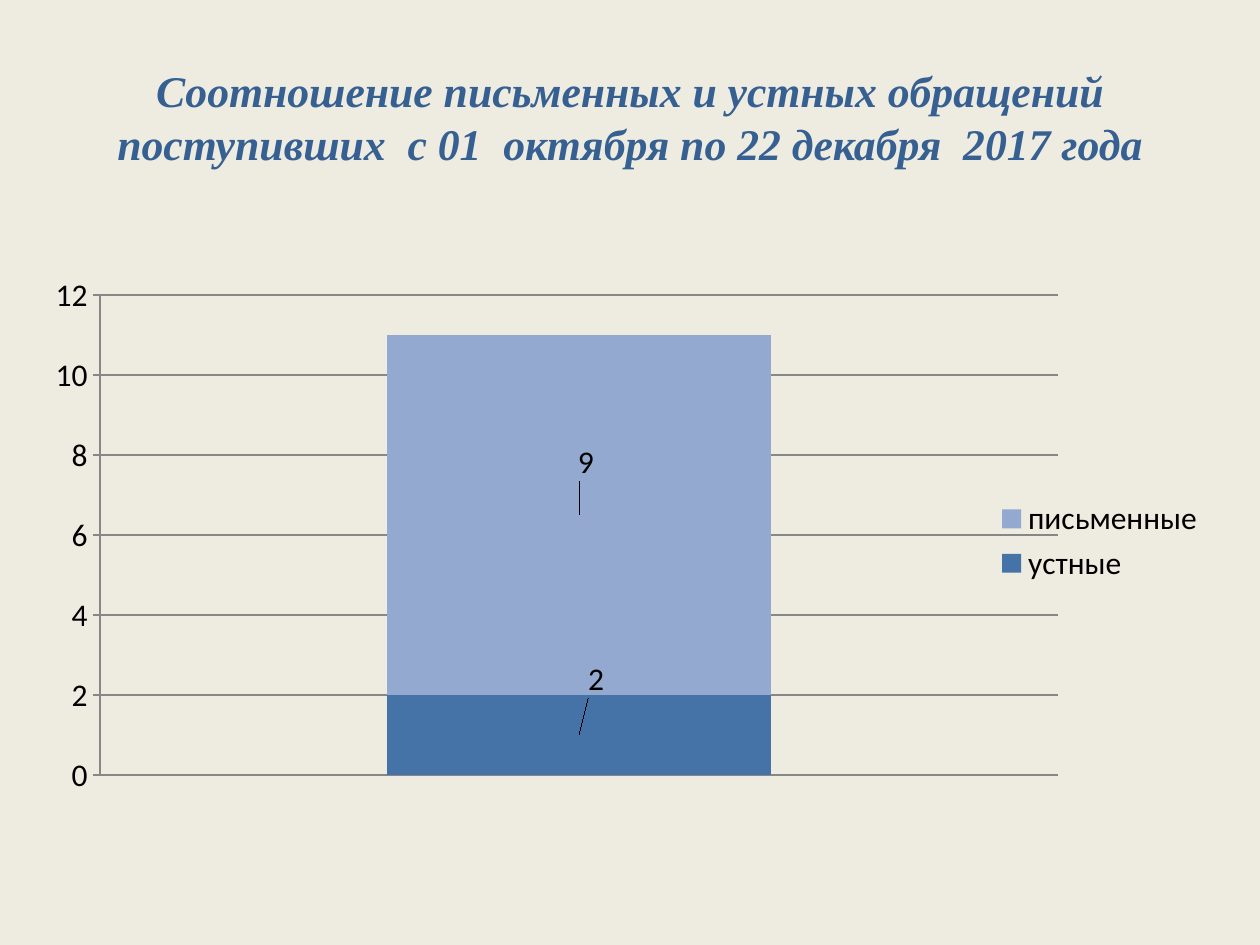
"""Build a slide with a stacked column chart of written and oral appeals."""
import pptx
import pptx.chart.data
import pptx.dml.color
import pptx.enum.chart
import pptx.enum.text
import pptx.oxml
import pptx.oxml.ns
import pptx.util

TITLE = [
    "Соотношение письменных и устных обращений",
    "поступивших  с 01  октября по 22 декабря  2017 года",
]
CATEGORIES = ["1"]
SERIES = [
    {"name": "устные", "values": [2], "color": "4572A7", "label_shift": (17, -56)},
    {"name": "письменные", "values": [9], "color": "93A9CF", "label_shift": (7, -53)},
]
THEME = {
    "background": "EEECE1", "title": "376092", "text": "000000", "line": "878787",
    "title_font": "Times New Roman", "chart_font": "Calibri",
    "title_size": 25, "chart_size": 18, "line_width": 0.75,
}
SLIDE = (1260, 945)
TITLE_BOX = (63, 38, 1134, 157)
CHART_BOX = (29, 276, 1182, 546)
PLOT_BOX = (71, 18, 958, 481)
LEGEND_POS = (963, 217)
PX = 914400 // 126


def emu(*lengths):
    return [pptx.util.Emu(length * PX) for length in lengths]


def rgb(name):
    return pptx.dml.color.RGBColor.from_string(THEME.get(name, name))


def set_font(font, family, size, color):
    font.name = THEME[family]
    font.size = pptx.util.Pt(THEME[size])
    font.color.rgb = rgb(color)


def set_line(line):
    line.color.rgb = rgb("line")
    line.width = pptx.util.Pt(THEME["line_width"])


def make_layout(box, edge=False, inner=False):
    """Return a manual chart layout from px lengths within the chart."""
    parts = ['<c:layoutTarget val="inner"/>'] if inner else []
    if edge:
        parts += ['<c:xMode val="edge"/>', '<c:yMode val="edge"/>']
    for tag, length, total in zip("xywh", box, CHART_BOX[2:] * 2):
        parts.append(f'<c:{tag} val="{length / total:.4f}"/>')
    ns = pptx.oxml.ns.nsdecls("c")
    return pptx.oxml.parse_xml(
        f'<c:layout {ns}><c:manualLayout>{"".join(parts)}</c:manualLayout></c:layout>')


def drop_layout(element):
    for old in element.findall(pptx.oxml.ns.qn("c:layout")):
        element.remove(old)


def add_title(s):
    sp = s.shapes.add_textbox(*emu(*TITLE_BOX))
    tf = sp.text_frame
    tf.word_wrap = True
    tf.vertical_anchor = pptx.enum.text.MSO_ANCHOR.MIDDLE
    p = tf.paragraphs[0]
    p.alignment = pptx.enum.text.PP_ALIGN.CENTER
    for i, line in enumerate(TITLE):
        if i:
            p.add_line_break()
        r = p.add_run()
        r.text = line
        set_font(r.font, "title_font", "title_size", "title")
        r.font.bold = r.font.italic = True


def add_chart(s):
    data = pptx.chart.data.CategoryChartData()
    data.categories = CATEGORIES
    for item in SERIES:
        data.add_series(item["name"], item["values"])
    kind = pptx.enum.chart.XL_CHART_TYPE.COLUMN_STACKED
    chart = s.shapes.add_chart(kind, *emu(*CHART_BOX), data).chart
    chart.has_title = False
    set_font(chart.font, "chart_font", "chart_size", "text")

    chart.category_axis.visible = False
    axis = chart.value_axis
    axis.minimum_scale, axis.maximum_scale, axis.major_unit = 0, 12, 2
    axis.major_tick_mark = pptx.enum.chart.XL_TICK_MARK.OUTSIDE
    axis.has_major_gridlines = True
    set_line(axis.major_gridlines.format.line)
    set_line(axis.format.line)

    plot = chart.plots[0]
    plot.gap_width, plot.overlap = 150, 100
    plot.vary_by_categories = False
    for series, item in zip(plot.series, SERIES):
        series.format.fill.solid()
        series.format.fill.fore_color.rgb = rgb(item["color"])
        series.data_labels.show_value = True
        label = series.points[0].data_label
        label.position = pptx.enum.chart.XL_LABEL_POSITION.CENTER
        idx = series.data_labels._element.find(".//" + pptx.oxml.ns.qn("c:idx"))
        idx.addnext(make_layout(item["label_shift"]))

    chart.has_legend = True
    legend = chart.legend
    legend.position = pptx.enum.chart.XL_LEGEND_POSITION.RIGHT
    legend.include_in_layout = False
    drop_layout(legend._element)
    legend._element.find(pptx.oxml.ns.qn("c:legendPos")).addnext(
        make_layout(LEGEND_POS, edge=True))

    area = chart._chartSpace.find(".//" + pptx.oxml.ns.qn("c:plotArea"))
    drop_layout(area)
    area.insert(0, make_layout(PLOT_BOX, edge=True, inner=True))


def main():
    prs = pptx.Presentation()
    prs.slide_width, prs.slide_height = emu(*SLIDE)
    s = prs.slides.add_slide(prs.slide_layouts[6])
    s.background.fill.solid()
    s.background.fill.fore_color.rgb = rgb("background")
    add_title(s)
    add_chart(s)
    prs.save("out.pptx")


if __name__ == "__main__":
    main()
